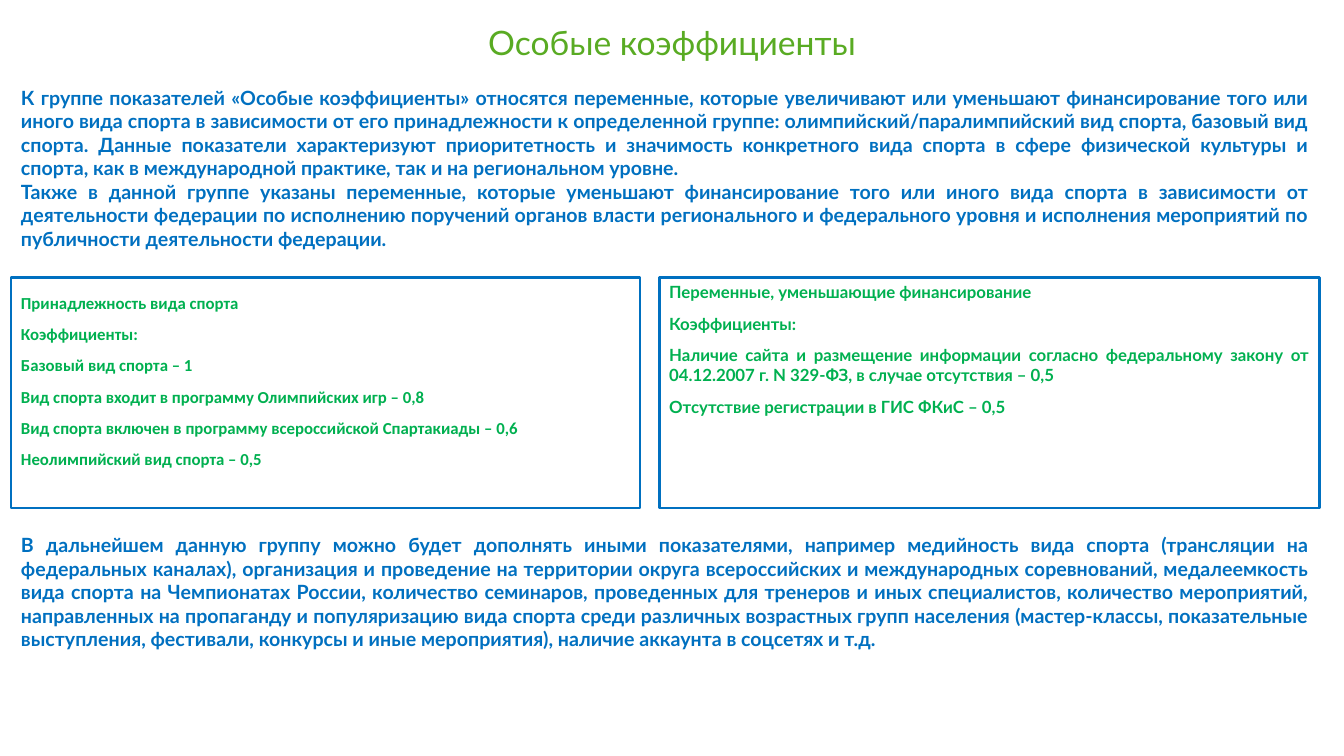
"""Build the slide on special coefficients for funding sports."""
from dataclasses import dataclass

import pptx
import pptx.dml.color
import pptx.enum.shapes
import pptx.enum.text
import pptx.util

Pt = pptx.util.Pt
RGB = pptx.dml.color.RGBColor.from_string
ALIGN = pptx.enum.text.PP_ALIGN


@dataclass(frozen=True)
class Theme:
    """Colours, fonts and type sizes of the slide."""
    title_color: str = "59AB23"
    body_color: str = "0070C0"
    list_color: str = "00B050"
    font: str = "Lato"
    list_font: str = "Calibri"
    title_size: int = 24
    body_size: int = 14
    list_size: int = 12


THEME = Theme()
LEFT, WIDTH = 7.92, 934.56
BOX_TOP, BOX_HEIGHT = 198, 164.9

TITLE = "Особые коэффициенты"
INTRO = [
    "К группе показателей «Особые коэффициенты» относятся переменные, которые "
    "увеличивают или уменьшают финансирование того или иного вида спорта в "
    "зависимости от его принадлежности к определенной группе: "
    "олимпийский/паралимпийский вид спорта, базовый вид спорта. Данные показатели "
    "характеризуют приоритетность и значимость конкретного вида спорта в сфере "
    "физической культуры и спорта, как в международной практике, так и на "
    "региональном уровне.",
    "Также в данной группе указаны переменные, которые уменьшают финансирование "
    "того или иного вида спорта в зависимости от деятельности федерации по "
    "исполнению поручений органов власти регионального и федерального уровня и "
    "исполнения мероприятий по публичности деятельности федерации.",
]
SPORT_STATUS = [
    "Принадлежность вида спорта",
    "Коэффициенты:",
    "Базовый вид спорта – 1",
    "Вид спорта входит в программу Олимпийских игр – 0,8",
    "Вид спорта включен в программу всероссийской Спартакиады – 0,6",
    "Неолимпийский вид спорта – 0,5",
]
REDUCTIONS = [
    "Переменные, уменьшающие финансирование",
    "Коэффициенты:",
    "Наличие сайта и размещение информации согласно федеральному закону от "
    "04.12.2007 г. N 329-ФЗ, в случае отсутствия – 0,5",
    "Отсутствие регистрации в ГИС ФКиС – 0,5",
]
OUTLOOK = [
    "В дальнейшем данную группу можно будет дополнять иными показателями, например "
    "медийность вида спорта (трансляции на федеральных каналах), организация и "
    "проведение на территории округа всероссийских и международных соревнований, "
    "медалеемкость вида спорта на Чемпионатах России, количество семинаров, "
    "проведенных для тренеров и иных специалистов, количество мероприятий, "
    "направленных на пропаганду и популяризацию вида спорта среди различных "
    "возрастных групп населения (мастер-классы, показательные выступления, "
    "фестивали, конкурсы и иные мероприятия), наличие аккаунта в соцсетях и т.д.",
]


def write(sp, lines, size, color, font=THEME.font, bold=True,
          align=ALIGN.JUSTIFY, after=0):
    """Fill a shape with evenly formatted paragraphs, set from the top."""
    tf = sp.text_frame
    tf.text = "\n".join(lines)
    tf.word_wrap = True
    tf.vertical_anchor = pptx.enum.text.MSO_ANCHOR.TOP
    for p in tf.paragraphs:
        p.alignment = align
        p.space_after = Pt(after)
        for r in p.runs:
            r.font.name = font
            r.font.size = Pt(size)
            r.font.bold = bold
            r.font.color.rgb = RGB(color)
    return tf


def add_title(s, text):
    """Place the title across the top of the slide."""
    sp = s.shapes.title
    sp.left, sp.top, sp.width, sp.height = Pt(0), Pt(12.24), Pt(960), Pt(36)
    tf = write(sp, [text], THEME.title_size, THEME.title_color,
               bold=False, align=ALIGN.CENTER)
    tf.auto_size = pptx.enum.text.MSO_AUTO_SIZE.SHAPE_TO_FIT_TEXT


def add_prose(s, top, height, lines):
    """Add a full-width block of justified text."""
    sp = s.shapes.add_textbox(Pt(LEFT), Pt(top), Pt(WIDTH), Pt(height))
    tf = write(sp, lines, THEME.body_size, THEME.body_color)
    tf.auto_size = pptx.enum.text.MSO_AUTO_SIZE.SHAPE_TO_FIT_TEXT


def add_box(s, left, width, lines, font):
    """Add an outlined box holding a list of coefficients."""
    sp = s.shapes.add_shape(pptx.enum.shapes.MSO_SHAPE.RECTANGLE,
                            Pt(left), Pt(BOX_TOP), Pt(width), Pt(BOX_HEIGHT))
    sp.shadow.inherit = False
    sp.fill.background()
    sp.line.color.rgb = RGB(THEME.body_color)
    sp.line.width = Pt(2)
    return write(sp, lines, THEME.list_size, THEME.list_color, font, after=8)


def main():
    """Build and save the slide."""
    prs = pptx.Presentation()
    prs.slide_width, prs.slide_height = Pt(960), Pt(540)
    s = prs.slides.add_slide(prs.slide_layouts.get_by_name("Title Only"))
    add_title(s, TITLE)
    add_prose(s, 57.6, 126, INTRO)
    tf = add_box(s, LEFT, 449.28, SPORT_STATUS, THEME.list_font)
    tf.paragraphs[0].line_spacing = 1.5
    add_box(s, 470.88, 471.6, REDUCTIONS, THEME.font)
    add_prose(s, 377.28, 92.16, OUTLOOK)
    prs.save("out.pptx")


if __name__ == "__main__":
    main()
